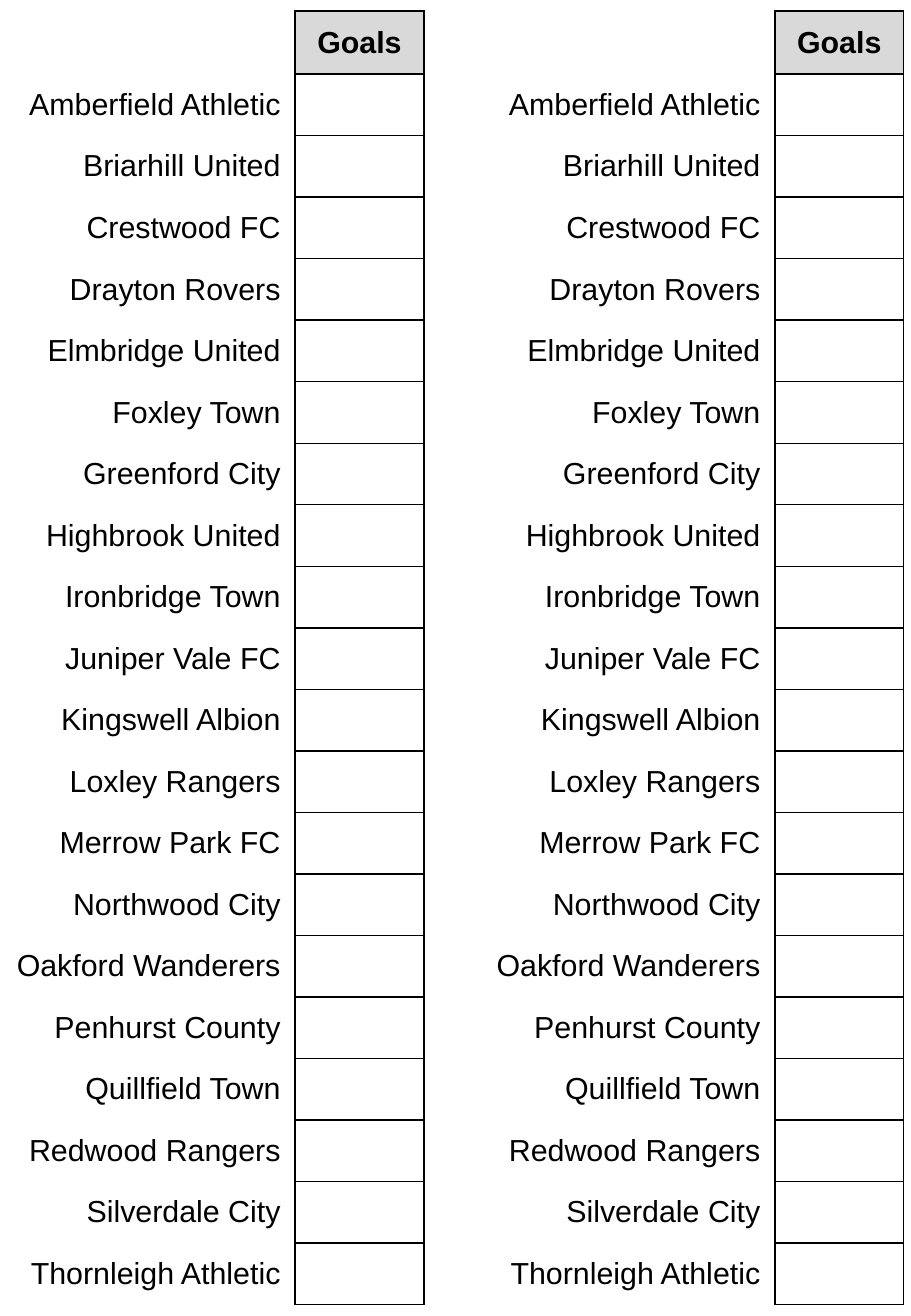
from dataclasses import dataclass

from lxml.etree import SubElement
from pptx import Presentation
from pptx.dml.color import RGBColor
from pptx.enum.text import MSO_ANCHOR, PP_ALIGN
from pptx.oxml.ns import qn
from pptx.util import Inches, Pt

TEAMS = [
    "Amberfield Athletic", "Briarhill United", "Crestwood FC", "Drayton Rovers",
    "Elmbridge United", "Foxley Town", "Greenford City", "Highbrook United",
    "Ironbridge Town", "Juniper Vale FC", "Kingswell Albion", "Loxley Rangers",
    "Merrow Park FC", "Northwood City", "Oakford Wanderers", "Penhurst County",
    "Quillfield Town", "Redwood Rangers", "Silverdale City", "Thornleigh Athletic",
]


@dataclass(frozen=True)
class Theme:
    font: str = "Arial"
    size: int = 18
    ink: str = "000000"
    header_fill: str = "D9D9D9"
    border_width: int = 1
    width: float = 7.5
    height: float = 10.83
    side_margin: float = 0.06
    top_margin: float = 0.09
    team_column: float = 2.37
    goals_column: float = 1.06
    header_row: float = 0.52
    text_gap: float = 0.12


class GoalSheet:
    """Draws goal tables on one slide in a shared style."""

    def __init__(self, slide, theme):
        self.slide = slide
        self.theme = theme

    def set_label(self, cell, text, alignment, bold=False, right_gap=0):
        theme = self.theme
        cell.margin_left = cell.margin_top = cell.margin_bottom = 0
        cell.margin_right = Inches(right_gap)
        cell.vertical_anchor = MSO_ANCHOR.MIDDLE
        paragraph = cell.text_frame.paragraphs[0]
        paragraph.text = text
        paragraph.alignment = alignment
        font = paragraph.font
        font.name, font.size, font.bold = theme.font, Pt(theme.size), bold
        font.color.rgb = RGBColor.from_string(theme.ink)

    def paint(self, cell, sides, fill=None):
        properties = cell._tc.get_or_add_tcPr()
        for side in sides:
            line = SubElement(properties, qn(f"a:ln{side}"), w=str(Pt(self.theme.border_width)))
            solid = SubElement(line, qn("a:solidFill"))
            SubElement(solid, qn("a:srgbClr"), val=self.theme.ink)
        if fill:
            cell.fill.solid()
            cell.fill.fore_color.rgb = RGBColor.from_string(fill)
        else:
            cell.fill.background()

    def add_goal_table(self, left, teams):
        theme = self.theme
        widths = theme.team_column, theme.goals_column
        height = theme.height - 2 * theme.top_margin
        team_row = (height - theme.header_row) / len(teams)
        table = self.slide.shapes.add_table(
            len(teams) + 1, len(widths), Inches(left), Inches(theme.top_margin),
            Inches(sum(widths)), Inches(height),
        ).table
        table.first_row = table.horz_banding = False
        for column, width in zip(table.columns, widths):
            column.width = Inches(width)
        for index, row in enumerate(table.rows):
            row.height = Inches(team_row if index else theme.header_row)
            team_cell, goals_cell = row.cells
            self.paint(team_cell, "R")
            self.paint(goals_cell, "LRTB", None if index else theme.header_fill)
            if index:
                self.set_label(team_cell, teams[index - 1], PP_ALIGN.RIGHT, right_gap=theme.text_gap)
            else:
                self.set_label(goals_cell, "Goals", PP_ALIGN.CENTER, bold=True)


def main():
    theme = Theme()
    presentation = Presentation()
    presentation.slide_width = Inches(theme.width)
    presentation.slide_height = Inches(theme.height)
    slide = presentation.slides.add_slide(presentation.slide_layouts[6])
    sheet = GoalSheet(slide, theme)
    right_table = theme.width - theme.side_margin - theme.team_column - theme.goals_column
    for left in (theme.side_margin, right_table):
        sheet.add_goal_table(left, TEAMS)
    presentation.save("out.pptx")


if __name__ == "__main__":
    main()
